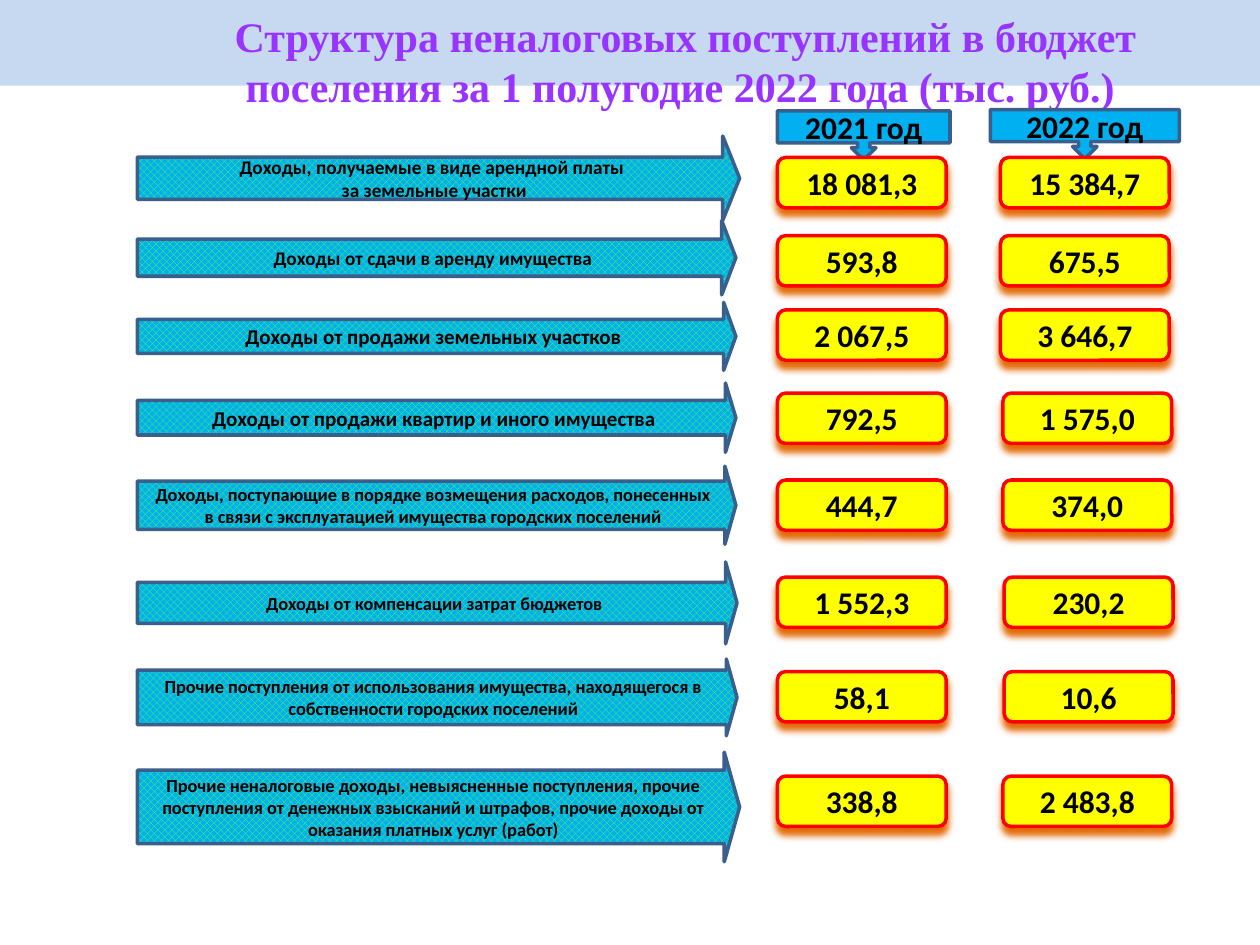
from dataclasses import dataclass

from lxml import etree
from pptx import Presentation
from pptx.dml.color import RGBColor
from pptx.enum.dml import MSO_PATTERN
from pptx.enum.shapes import MSO_SHAPE
from pptx.enum.text import MSO_ANCHOR, MSO_AUTO_SIZE, PP_ALIGN
from pptx.oxml.ns import qn
from pptx.util import Inches, Pt

RECT = MSO_SHAPE.RECTANGLE
ARROW = MSO_SHAPE.RIGHT_ARROW
CALLOUT = MSO_SHAPE.DOWN_ARROW_CALLOUT
ROUND = MSO_SHAPE.ROUNDED_RECTANGLE
MESH = MSO_PATTERN.OUTLINED_DIAMOND
TOP, MIDDLE = MSO_ANCHOR.TOP, MSO_ANCHOR.MIDDLE
CENTER = PP_ALIGN.CENTER
FIXED = MSO_AUTO_SIZE.NONE


@dataclass(frozen=True)
class Theme:
    band: str = "C6D9F1"
    title: str = "9933FF"
    edge: str = "467AB8"
    ink: str = "000000"
    blue: str = "00B0F0"
    green: str = "66FF33"
    navy: str = "3A5F8C"
    yellow: str = "FFFF00"
    red: str = "FF0000"
    glow: str = "E46C0A"
    head: str = "Times New Roman"
    body: str = "Calibri"
    big: float = 24
    mid: float = 18
    label: float = 12
    small: float = 11
    tiny: float = 10.5


THEME = Theme()
TITLE = ("Структура неналоговых поступлений в бюджет "
         "поселения за 1 полугодие 2022 года (тыс. руб.) ")
LEFT = 1.09
CARD_X = 6.17
CARD_W, CARD_H = 1.34, 0.4
YEARS = [("2021 год", 6.17, 0.88, 1.37), ("2022 год", 7.86, 0.87, 1.5)]

ARROWS = [
    (1.08, 4.78, 0.67, 0.5, 0.2, THEME.small,
     ["Доходы, получаемые в виде арендной платы ", "за земельные участки"]),
    (1.75, 4.75, 0.59, 0.5, 0.19, THEME.small,
     ["Доходы от сдачи в аренду имущества"]),
    (2.4, 4.75, 0.54, 0.5, 0.18, THEME.label,
     ["Доходы от продажи земельных участков"]),
    (3.04, 4.75, 0.55, 0.5, 0.15, THEME.label,
     ["Доходы от продажи квартир и иного имущества"]),
    (3.7, 4.75, 0.62, 0.62, 0.14, THEME.tiny,
     ["Доходы, поступающие в порядке возмещения расходов, понесенных "
      "в связи с эксплуатацией имущества городских поселений"]),
    (4.46, 4.76, 0.65, 0.5, 0.14, THEME.tiny,
     ["Доходы от компенсации затрат бюджетов"]),
    (5.23, 4.76, 0.61, 0.71, 0.14, THEME.tiny,
     ["Прочие поступления от использования имущества, находящегося в "
      "собственности городских поселений"]),
    (5.97, 4.78, 0.87, 0.67, 0.14, THEME.tiny,
     ["Прочие неналоговые доходы, невыясненные поступления, прочие "
      "поступления от денежных взысканий и штрафов, прочие доходы от "
      "оказания платных услуг (работ)"]),
]

CARDS = [
    (1.25, "18 081,3", "15 384,7", 7.94),
    (1.87, "593,8", "675,5", 7.94),
    (2.46, "2 067,5", "3 646,7", 7.94),
    (3.12, "792,5", "1 575,0", 7.96),
    (3.81, "444,7", "374,0", 7.96),
    (4.58, "1 552,3", "230,2", 7.97),
    (5.33, "58,1", "10,6", 7.97),
    (6.16, "338,8", "2 483,8", 7.96),
]


def color(code):
    return RGBColor.from_string(code)


def write(shape, lines, size, face=THEME.body, ink=THEME.ink, anchor=MIDDLE):
    frame = shape.text_frame
    frame.word_wrap = True
    frame.auto_size = FIXED
    frame.vertical_anchor = anchor
    for i, line in enumerate(lines):
        para = frame.add_paragraph() if i else frame.paragraphs[0]
        para.alignment = CENTER
        run = para.add_run()
        run.text = line
        run.font.name = face
        run.font.size = Pt(size)
        run.font.bold = True
        run.font.color.rgb = color(ink)


def place(shape, left, top, width, height):
    shape.left, shape.top = Inches(left), Inches(top)
    shape.width, shape.height = Inches(width), Inches(height)


def draw(slide, kind, area, fill, line=None):
    shape = slide.shapes.add_shape(kind, *map(Inches, area))
    shape.shadow.inherit = False
    shape.fill.solid()
    shape.fill.fore_color.rgb = color(fill)
    if line:
        shape.line.color.rgb = color(line)
        shape.line.width = Pt(2)
    else:
        shape.line.fill.background()
    return shape


def add_title(slide):
    title = slide.shapes.title
    place(title, 1, 0.03, 8.88, 0.85)
    write(title, [TITLE], THEME.big, THEME.head, THEME.title, TOP)
    props = title.text_frame.paragraphs[0].runs[0].font._element
    line = etree.Element(qn("a:ln"), w=str(Pt(0.83)))
    fill = etree.SubElement(line, qn("a:solidFill"))
    etree.SubElement(fill, qn("a:srgbClr"), val=THEME.edge)
    props.insert(0, line)


def add_band(slide):
    band = draw(slide, RECT, (0, 0, 10, 0.68), THEME.band)
    slide.shapes._spTree.insert(2, band._element)


def add_arrow(slide, top, width, height, shaft, tip, size, lines):
    arrow = draw(slide, ARROW, (LEFT, top, width, height), THEME.blue, THEME.navy)
    arrow.adjustments[0], arrow.adjustments[1] = shaft, tip
    arrow.fill.patterned()
    arrow.fill.pattern = MESH
    arrow.fill.fore_color.rgb = color(THEME.green)
    arrow.fill.back_color.rgb = color(THEME.blue)
    write(arrow, lines, size)


def add_year(slide, text, left, top, width):
    year = draw(slide, CALLOUT, (left, top, width, 0.39), THEME.blue, THEME.navy)
    write(year, [text], THEME.mid)


def add_card(slide, text, left, top):
    card = draw(slide, ROUND, (left, top, CARD_W, CARD_H), THEME.yellow, THEME.red)
    glow = etree.SubElement(
        card._element.spPr.find(qn("a:effectLst")), qn("a:outerShdw"),
        blurRad=str(Pt(4)), dist=str(Pt(4)), dir="5400000", rotWithShape="0")
    etree.SubElement(glow, qn("a:srgbClr"), val=THEME.glow)
    write(card, [text], THEME.mid)


def main():
    deck = Presentation()
    deck.slide_width, deck.slide_height = Inches(10), Inches(7.5)
    slide = deck.slides.add_slide(deck.slide_layouts[5])
    add_title(slide)
    add_band(slide)
    for row in ARROWS:
        add_arrow(slide, *row)
    for year in YEARS:
        add_year(slide, *year)
    for top, old, new, left in CARDS:
        add_card(slide, old, CARD_X, top)
        add_card(slide, new, left, top)
    deck.save("out.pptx")


if __name__ == "__main__":
    main()
